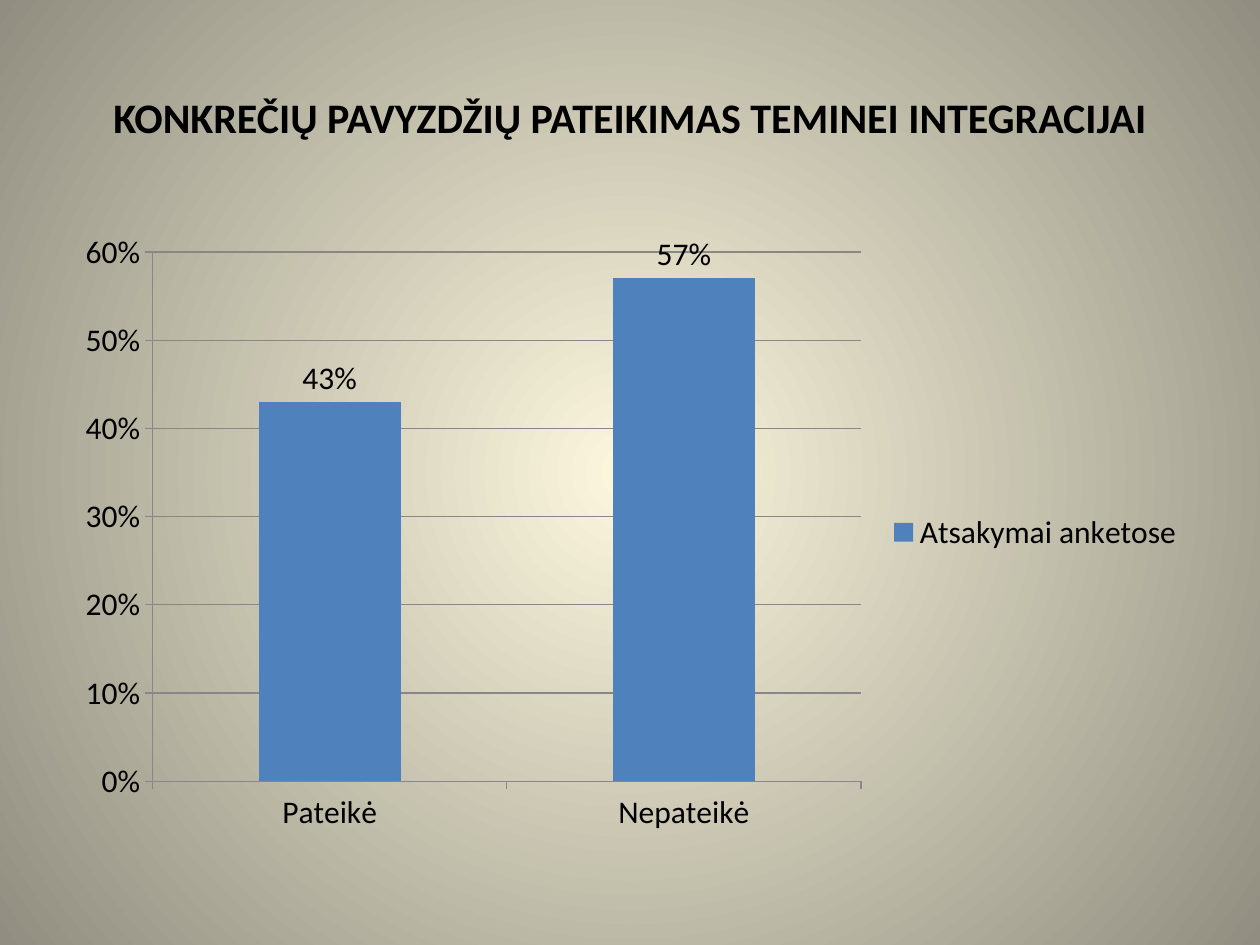
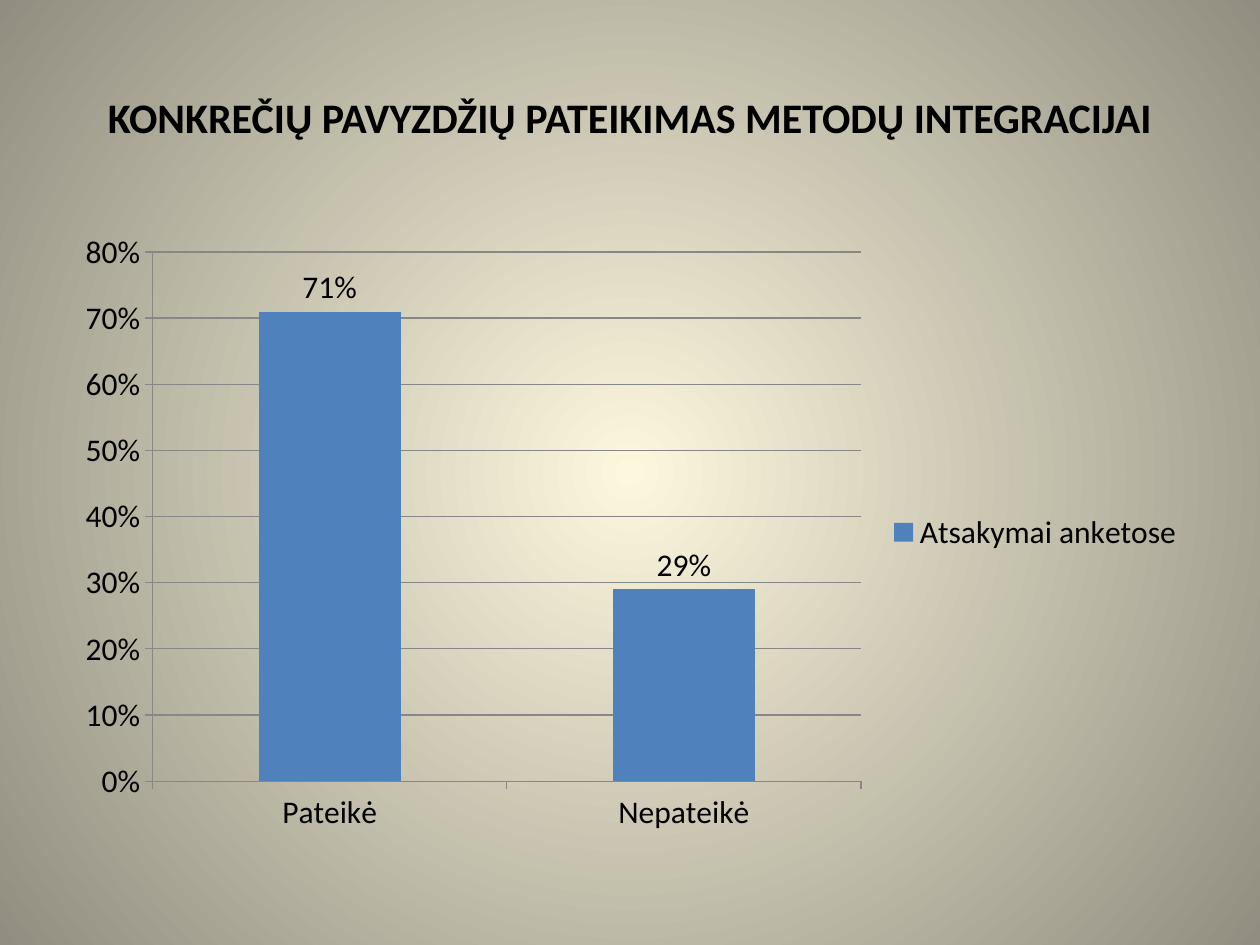
from lxml import etree
from pptx import Presentation
from pptx.chart.data import CategoryChartData
from pptx.dml.color import RGBColor
from pptx.enum.chart import XL_CHART_TYPE, XL_LABEL_POSITION, XL_LEGEND_POSITION, XL_TICK_MARK
from pptx.enum.text import MSO_ANCHOR, PP_ALIGN
from pptx.oxml.ns import qn
from pptx.util import Inches, Pt

COLUMN = XL_CHART_TYPE.COLUMN_CLUSTERED
ABOVE = XL_LABEL_POSITION.OUTSIDE_END
RIGHT = XL_LEGEND_POSITION.RIGHT
OUT = XL_TICK_MARK.OUTSIDE
MIDDLE = MSO_ANCHOR.MIDDLE
CENTER = PP_ALIGN.CENTER

COLORS = {"glow": "FCF7DD", "edge": "918E81", "text": "000000",
          "bar": "4F81BD", "line": "878787"}
FONT = "Calibri"
LEFT, WIDTH = Inches(0.5), Inches(9)
ANSWERS = ["Pateikė", "Nepateikė"]
SERIES = "Atsakymai anketose"
SLIDES = [
    ("KONKREČIŲ PAVYZDŽIŲ PATEIKIMAS TEMINEI INTEGRACIJAI", [0.43, 0.57]),
    ("KONKREČIŲ PAVYZDŽIŲ PATEIKIMAS METODŲ INTEGRACIJAI", [0.71, 0.29]),
]


def color(name):
    return RGBColor.from_string(COLORS[name])


class Deck:
    def __init__(self):
        self.prs = Presentation()
        self.prs.slide_width, self.prs.slide_height = Inches(10), Inches(7.5)
        self.slide = None

    def add_slide(self):
        self.slide = self.prs.slides.add_slide(self.prs.slide_layouts[6])
        self.glow()

    def glow(self):
        """Fill the background with a circular gradient from the centre."""
        fill = self.slide.background.fill
        fill.gradient()
        for stop, name, place in zip(fill.gradient_stops, ("glow", "edge"), (0, 1)):
            stop.color.rgb = color(name)
            stop.position = place
        grad = next(self.slide.element.iter(qn("a:gradFill")))
        grad.remove(grad.find(qn("a:lin")))
        path = etree.SubElement(grad, qn("a:path"), path="circle")
        etree.SubElement(path, qn("a:fillToRect"), dict.fromkeys("ltrb", "50000"))

    def style(self, font, size, bold=False):
        font.name, font.size, font.bold = FONT, Pt(size), bold
        font.color.rgb = color("text")

    def title(self, text):
        box = self.slide.shapes.add_textbox(LEFT, Inches(0.3), WIDTH, Inches(1.25))
        frame = box.text_frame
        frame.word_wrap = True
        frame.vertical_anchor = MIDDLE
        frame.text = text
        par = frame.paragraphs[0]
        par.alignment = CENTER
        self.style(par.runs[0].font, 24, True)

    def axis(self, axis):
        axis.major_tick_mark = OUT
        axis.format.line.color.rgb = color("line")

    def chart(self, values):
        data = CategoryChartData(number_format="0%")
        data.categories = ANSWERS
        data.add_series(SERIES, values)
        chart = self.slide.shapes.add_chart(
            COLUMN, LEFT, Inches(1.75), WIDTH, Inches(4.95), data).chart
        self.style(chart.font, 18)
        chart.has_title = False
        chart.has_legend = True
        chart.legend.position = RIGHT
        chart.legend.include_in_layout = False

        self.axis(chart.category_axis)
        scale = chart.value_axis
        self.axis(scale)
        scale.has_major_gridlines = True
        scale.major_gridlines.format.line.color.rgb = color("line")
        scale.tick_labels.number_format = "0%"
        scale.tick_labels.number_format_is_linked = False

        plot = chart.plots[0]
        plot.gap_width = 150
        plot.vary_by_categories = False
        fill = plot.series[0].format.fill
        fill.solid()
        fill.fore_color.rgb = color("bar")
        plot.has_data_labels = True
        labels = plot.data_labels
        labels.show_value = True
        labels.number_format = "0%"
        labels.number_format_is_linked = False
        labels.position = ABOVE


def main():
    deck = Deck()
    for title, values in SLIDES:
        deck.add_slide()
        deck.title(title)
        deck.chart(values)
    deck.prs.save("out.pptx")


if __name__ == "__main__":
    main()
